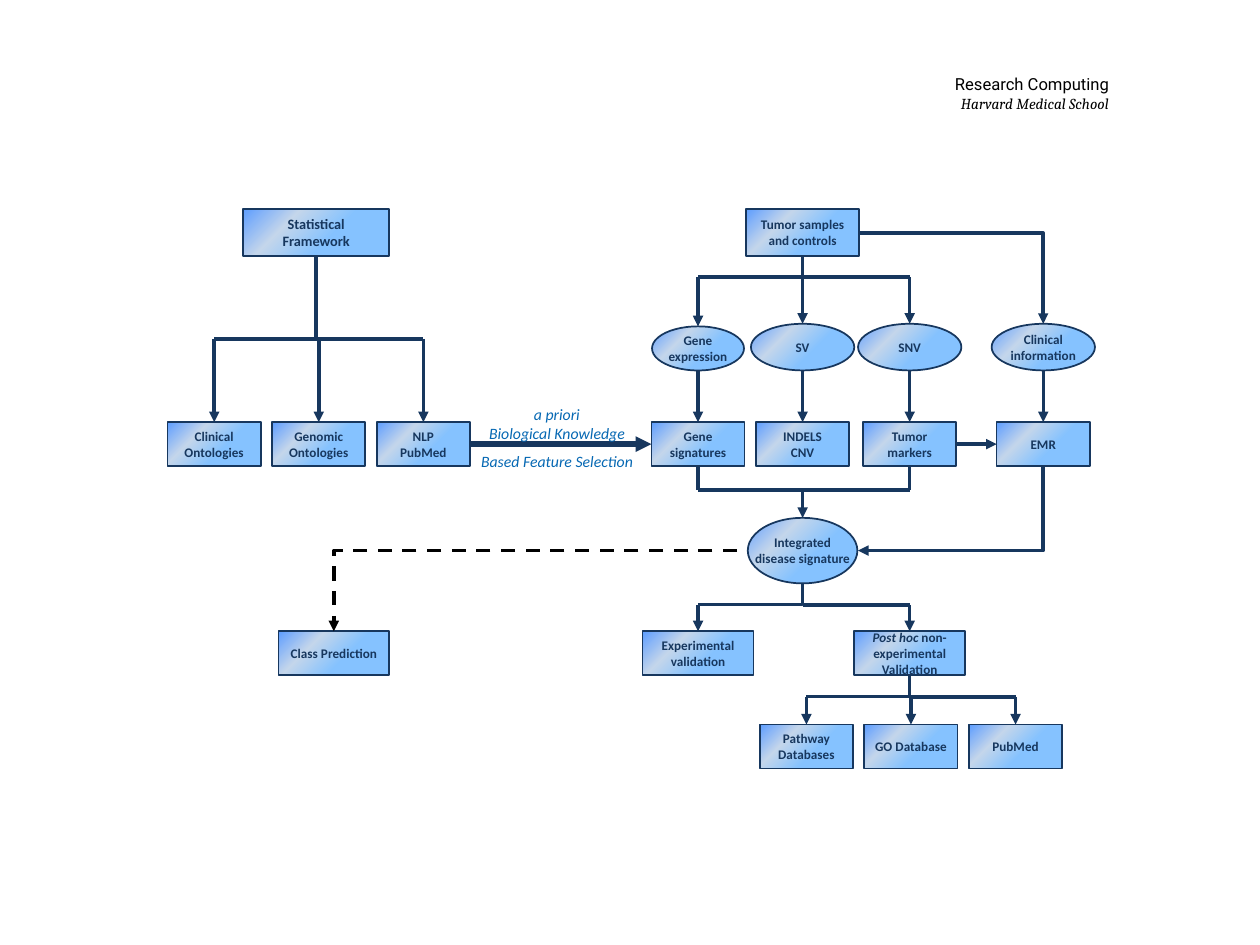
from dataclasses import dataclass

from lxml import etree
from pptx import Presentation
from pptx.dml.color import RGBColor
from pptx.enum.dml import MSO_LINE
from pptx.enum.shapes import MSO_CONNECTOR, MSO_SHAPE
from pptx.enum.text import MSO_ANCHOR, PP_ALIGN
from pptx.oxml.ns import qn
from pptx.util import Inches, Pt

RECTANGLE, OVAL = MSO_SHAPE.RECTANGLE, MSO_SHAPE.OVAL
STRAIGHT, ELBOW = MSO_CONNECTOR.STRAIGHT, MSO_CONNECTOR.ELBOW
CENTER, RIGHT = PP_ALIGN.CENTER, PP_ALIGN.RIGHT
MIDDLE, DASH = MSO_ANCHOR.MIDDLE, MSO_LINE.DASH
TOP_SIDE, LEFT_SIDE, BOTTOM_SIDE, RIGHT_SIDE = range(4)


@dataclass(frozen=True)
class Theme:
    navy: str = "17375E"
    blue: str = "0668B3"
    black: str = "000000"
    gradient: tuple = ((40, "85C2FF"), (70, "C4D6EB"), (100, "5E9EFF"), (100, "FFEBFA"))
    gradient_angle: int = 135
    font: str = "Calibri"
    node_size: float = 7.5
    framework_size: float = 8.2
    label_size: float = 9
    outline: float = 1
    line: float = 2
    heavy_line: float = 3


class Diagram:
    def __init__(self, slide, theme):
        self.slide = slide
        self.theme = theme

    def style(self, paragraph, size, color, font=None, align=CENTER, bold=False, italic=None):
        paragraph.alignment = align
        paragraph.font.name = font or self.theme.font
        paragraph.font.size = Pt(size)
        paragraph.font.color.rgb = RGBColor.from_string(color)
        paragraph.font.bold = bold
        paragraph.font.italic = italic

    def text(self, left, top, width, height, lines, anchor=None):
        """Text box; each line is a pair of text and style options."""
        frame = self.slide.shapes.add_textbox(
            Inches(left), Inches(top), Inches(width), Inches(height)).text_frame
        frame.word_wrap = True
        frame.vertical_anchor = anchor
        frame.text = "\n".join(content for content, _ in lines)
        for paragraph, (_, options) in zip(frame.paragraphs, lines):
            self.style(paragraph, **options)
        return frame

    def node(self, kind, center, top, width, height, text, size=None, italic_start="", wrap=True):
        shape = self.slide.shapes.add_shape(
            kind, Inches(center - width / 2), Inches(top), Inches(width), Inches(height))
        shape.shadow.inherit = False
        shape.line.color.rgb = RGBColor.from_string(self.theme.navy)
        shape.line.width = Pt(self.theme.outline)
        self.gradient(shape)
        frame = shape.text_frame
        frame.word_wrap = wrap
        frame.vertical_anchor = MIDDLE
        frame.margin_left = frame.margin_right = Inches(0.08 if kind == RECTANGLE else 0)
        frame.margin_top = frame.margin_bottom = 0
        frame.text = text
        if italic_start:
            paragraph = frame.paragraphs[0]
            paragraph.runs[0].text = italic_start
            paragraph.runs[0].font.italic = True
            paragraph.add_run().text = text
        for paragraph in frame.paragraphs:
            self.style(paragraph, size or self.theme.node_size, self.theme.navy, bold=True)
        return shape

    def box(self, center, top, text, width=0.74, height=0.35, **options):
        return self.node(RECTANGLE, center, top, width, height, text, **options)

    def oval(self, center, top, text, width=0.82, height=0.37, **options):
        return self.node(OVAL, center, top, width, height, text, **options)

    def gradient(self, shape):
        shape.fill.gradient()
        shape.fill.gradient_angle = self.theme.gradient_angle
        stops = shape._element.spPr.find(qn("a:gradFill")).find(qn("a:gsLst"))
        for stop in list(stops):
            stops.remove(stop)
        for position, color in self.theme.gradient:
            stop = etree.SubElement(stops, qn("a:gs"), pos=str(position * 1000))
            etree.SubElement(stop, qn("a:srgbClr"), val=color)

    def connector(self, kind, start, end, arrow, color=None, width=None):
        line = self.slide.shapes.add_connector(kind, *map(Inches, start + end))
        line.line.color.rgb = RGBColor.from_string(color or self.theme.navy)
        line.line.width = Pt(width or self.theme.line)
        if arrow:
            etree.SubElement(line.line._get_or_add_ln(), qn(f"a:{arrow}End"), type="triangle")
        etree.SubElement(line._element.spPr, qn("a:effectLst"))
        return line

    def line(self, start, end, arrow=None, **options):
        return self.connector(STRAIGHT, start, end, arrow, **options)

    def corner(self, start, end, arrow=None, **options):
        """One bend: first across, then up or down."""
        line = self.connector(ELBOW, start, end, arrow, **options)
        line._element.spPr.find(qn("a:prstGeom")).set("prst", "bentConnector2")
        return line

    def arrow_down(self, source, target):
        """Arrow from an oval's bottom to a box's top."""
        x = center_of(source)
        arrow = self.line((x, bottom_of(source)), (x, target.top.inches), "tail")
        arrow.end_connect(target, TOP_SIDE)

    def arrow_right(self, source, target, **options):
        arrow = self.line((0, 0), (1, 0), "tail", **options)
        arrow.begin_connect(source, RIGHT_SIDE)
        arrow.end_connect(target, LEFT_SIDE)

    def branch(self, parent, bus, children):
        """Stem from the parent, a bus, and an arrow down to each child."""
        stem = center_of(parent)
        self.corner((center_of(children[0]), bus), (stem, bottom_of(parent)))
        self.line((stem, bus), (center_of(children[-1]), bus))
        for child in children:
            drop = self.line((center_of(child), bus), (center_of(child), child.top.inches), "tail")
            drop.end_connect(child, TOP_SIDE)


def center_of(shape):
    return (shape.left + shape.width / 2) / Inches(1)


def bottom_of(shape):
    return (shape.top + shape.height) / Inches(1)


def main():
    presentation = Presentation()
    presentation.slide_width, presentation.slide_height = Inches(10), Inches(7.5)
    theme = Theme()
    diagram = Diagram(presentation.slides.add_slide(presentation.slide_layouts[6]), theme)

    # Header
    header = dict(color=theme.black, align=RIGHT)
    diagram.text(6.37, 0.41, 2.53, 0.66, [
        ("Research Computing", dict(header, size=9.5, font="Roboto")),
        ("Harvard Medical School", dict(header, size=8.7, font="Cambria", italic=True)),
    ], MIDDLE)

    # Column centres and row tops
    expression_x, sv_x, snv_x, clinical_x = 5.54, 6.37, 7.22, 8.28
    top_row, oval_row, box_row, result_row, database_row = 1.66, 2.57, 3.35, 5.01, 5.75

    # Knowledge sources
    framework = diagram.box(2.51, top_row, "Statistical Framework", 1.16, 0.37,
                            size=theme.framework_size)
    sources = [diagram.box(1.7 + 0.83 * index, box_row, name) for index, name in
               enumerate(("Clinical Ontologies", "Genomic Ontologies", "NLP\nPubMed"))]
    diagram.branch(framework, 2.69, sources)

    # Tumor data and what is drawn from it
    samples = diagram.box(sv_x, top_row, "Tumor samples\nand controls", 0.9, 0.37)
    ovals = [
        diagram.oval(expression_x, 2.59, "Gene\nexpression", 0.73, 0.35),
        diagram.oval(sv_x, oval_row, "SV"),
        diagram.oval(snv_x, oval_row, "SNV"),
        diagram.oval(clinical_x, oval_row, "Clinical information"),
    ]
    columns = (expression_x, sv_x, snv_x, clinical_x)
    names = ("Gene signatures", "INDELS\nCNV", "Tumor markers", "EMR")
    boxes = [diagram.box(x, box_row, name) for x, name in zip(columns, names)]
    diagram.branch(samples, 2.2, ovals[:3])
    diagram.corner((6.82, 1.85), (clinical_x, oval_row), "tail")
    for oval, box in zip(ovals, boxes):
        diagram.arrow_down(oval, box)
    signatures, _, markers, records = boxes
    diagram.arrow_right(markers, records)
    diagram.arrow_right(sources[-1], signatures, width=theme.heavy_line)

    # Integrated signature
    merge_y = 3.89
    signature = diagram.oval(sv_x, 4.11, "Integrated\ndisease signature", 0.87, 0.52, wrap=False)
    for box in (signatures, markers):
        feed = diagram.line((center_of(box), 3.7), (center_of(box), merge_y))
        feed.begin_connect(box, BOTTOM_SIDE)
    diagram.line((expression_x, merge_y), (snv_x, merge_y))
    diagram.line((sv_x, merge_y), (sv_x, 4.11), "tail").end_connect(signature, TOP_SIDE)
    diagram.corner((6.81, 4.37), (clinical_x, 3.7), "head")

    # Prediction and validation
    prediction = diagram.box(2.65, result_row, "Class Prediction", 0.88)
    dashed = diagram.corner((5.85, 4.37), (center_of(prediction), result_row), "tail",
                            color=theme.black)
    dashed.line.dash_style = DASH
    experimental = diagram.box(expression_x, result_row, "Experimental validation", 0.88)
    post_hoc = diagram.box(snv_x, result_row, "non-experimental Validation", 0.88,
                           italic_start="Post hoc ")
    diagram.branch(signature, 4.8, [experimental, post_hoc])
    databases = [diagram.box(6.4 + 0.83 * index, database_row, name) for index, name in
                 enumerate(("Pathway Databases", "GO Database", "PubMed"))]
    diagram.branch(post_hoc, 5.53, databases)

    # Label on the heavy arrow
    label = dict(size=theme.label_size, color=theme.blue, italic=True)
    caption = diagram.text(3.61, 3.16, 1.62, 0.63, [
        (line, label) for line in
        ("a priori", "Biological Knowledge", "Based Feature Selection")])
    caption.paragraphs[-1].line_spacing = 1.5

    presentation.save("out.pptx")


if __name__ == "__main__":
    main()
